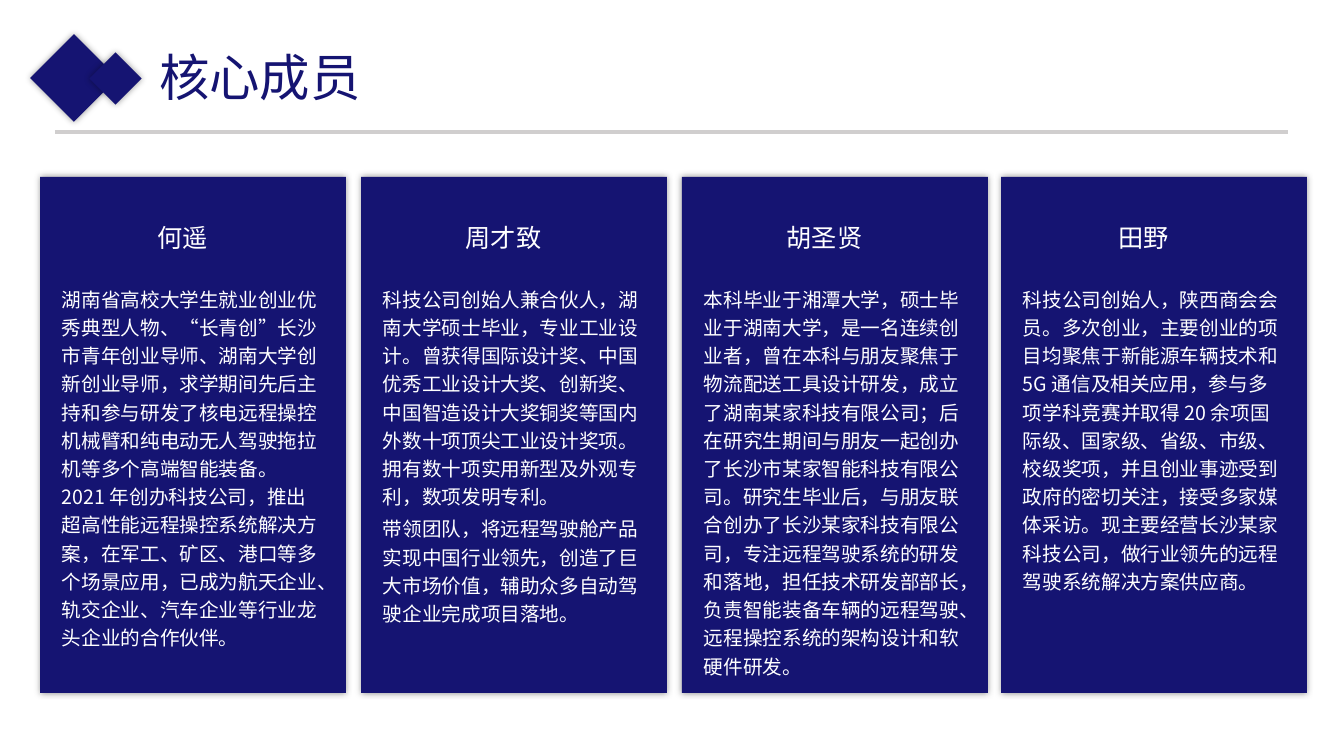
from lxml import etree
from pptx import Presentation
from pptx.dml.color import RGBColor
from pptx.enum.shapes import MSO_CONNECTOR, MSO_SHAPE
from pptx.enum.text import MSO_ANCHOR, MSO_AUTO_SIZE, PP_ALIGN
from pptx.oxml.ns import qn
from pptx.util import Emu, Pt

RECT = MSO_SHAPE.RECTANGLE
STRAIGHT = MSO_CONNECTOR.STRAIGHT
TOP = MSO_ANCHOR.TOP
NO_FIT = MSO_AUTO_SIZE.NONE
LEFT = PP_ALIGN.LEFT
CENTER = PP_ALIGN.CENTER

EMU_PER_PX = 914400 / 100.8
NAVY = "151472"
WHITE = "FFFFFF"
GREY = "D0CECE"
TITLE_FONT = "Noto Sans CJK JP"
BODY_FONT = "Noto Sans CJK SC"

CARD_TOP, CARD_W, CARD_H = 177, 306, 516
MEMBERS = [
    (40, "何遥", [
        "湖南省高校大学生就业创业优秀典型人物、“长青创”长沙市青年创业导师、湖南大学创新创业导师，"
        "求学期间先后主持和参与研发了核电远程操控机械臂和纯电动无人驾驶拖拉机等多个高端智能装备。"
        "2021 年创办科技公司，推出超高性能远程操控系统解决方案，在军工、矿区、港口等多个场景应用，"
        "已成为航天企业、轨交企业、汽车企业等行业龙头企业的合作伙伴。",
    ]),
    (361, "周才致", [
        "科技公司创始人兼合伙人，湖南大学硕士毕业，专业工业设计。曾获得国际设计奖、"
        "中国优秀工业设计大奖、创新奖、中国智造设计大奖铜奖等国内外数十项顶尖工业设计奖项。"
        "拥有数十项实用新型及外观专利，数项发明专利。",
        "带领团队，将远程驾驶舱产品实现中国行业领先，创造了巨大市场价值，"
        "辅助众多自动驾驶企业完成项目落地。",
    ]),
    (682, "胡圣贤", [
        "本科毕业于湘潭大学，硕士毕业于湖南大学，是一名连续创业者，曾在本科与朋友聚焦于物流配送工具设计研发，"
        "成立了湖南某家科技有限公司；后在研究生期间与朋友一起创办了长沙市某家智能科技有限公司。"
        "研究生毕业后，与朋友联合创办了长沙某家科技有限公司，专注远程驾驶系统的研发和落地，"
        "担任技术研发部部长，负责智能装备车辆的远程驾驶、远程操控系统的架构设计和软硬件研发。",
    ]),
    (1001, "田野", [
        "科技公司创始人，陕西商会会员。多次创业，主要创业的项目均聚焦于新能源车辆技术和 5G 通信及相关应用，"
        "参与多项学科竞赛并取得 20 余项国际级、国家级、省级、市级、校级奖项，"
        "并且创业事迹受到政府的密切关注，接受多家媒体采访。"
        "现主要经营长沙某家科技公司，做行业领先的远程驾驶系统解决方案供应商。",
    ]),
]


def px(n):
    return Emu(round(n * EMU_PER_PX))


def rgb(color):
    return RGBColor.from_string(color)


def format_runs(p, size, font, color):
    for r in p.runs:
        r.font.size = Pt(size)
        r.font.name = font
        r.font.color.rgb = rgb(color)
        ea = etree.SubElement(r.font._element, qn("a:ea"))
        ea.set("typeface", font)


def add_glow(sp):
    sp.shadow.inherit = False
    effects = sp._element.spPr.find(qn("a:effectLst"))
    shadow = etree.SubElement(effects, qn("a:outerShdw"), blurRad=str(Pt(5)), dist="0", dir="0")
    color = etree.SubElement(shadow, qn("a:srgbClr"), val="000000")
    etree.SubElement(color, qn("a:alpha"), val="40000")


def add_block(shapes, x, y, w, h, rotation=0):
    sp = shapes.add_shape(RECT, px(x), px(y), px(w), px(h))
    sp.rotation = rotation
    sp.fill.solid()
    sp.fill.fore_color.rgb = rgb(NAVY)
    sp.line.fill.background()
    add_glow(sp)


def add_rule(slide, x1, x2, y):
    line = slide.shapes.add_connector(STRAIGHT, px(x1), px(y), px(x2), px(y))
    line.line.color.rgb = rgb(GREY)
    line.line.width = Pt(2.25)
    etree.SubElement(line._element.spPr, qn("a:effectLst"))


def set_title(slide, text):
    title = slide.shapes.title
    title.left, title.top, title.width, title.height = px(149), px(41), px(626), px(72)
    tf = title.text_frame
    tf.text = text
    tf.auto_size = NO_FIT
    tf.vertical_anchor = TOP
    p = tf.paragraphs[0]
    p.alignment = LEFT
    format_runs(p, 36, TITLE_FONT, NAVY)


def add_name(shapes, x, y, name):
    tf = shapes.add_textbox(px(x), px(y), px(97), px(38)).text_frame
    tf.margin_left = tf.margin_top = tf.margin_right = tf.margin_bottom = 0
    tf.word_wrap = False
    tf.text = name
    p = tf.paragraphs[0]
    p.alignment = CENTER
    format_runs(p, 18, BODY_FONT, WHITE)


def add_profile(shapes, x, y, paragraphs):
    tf = shapes.add_textbox(px(x), px(y), px(278), px(385)).text_frame
    tf.word_wrap = True
    tf.text = "\n".join(paragraphs)
    for i, p in enumerate(tf.paragraphs):
        p.line_spacing = 1.2
        p.space_before = Pt(2.8 if i else 0)
        format_runs(p, 14, BODY_FONT, WHITE)


def add_member(slide, x, name, paragraphs):
    card = slide.shapes.add_group_shape().shapes
    add_block(card, x, CARD_TOP, CARD_W, CARD_H)
    add_name(card, x + 94, CARD_TOP + 45, name)
    add_profile(slide.shapes, x + 12, CARD_TOP + 101, paragraphs)


def main():
    prs = Presentation()
    prs.slide_width, prs.slide_height = px(1344), px(756)
    slide = prs.slides.add_slide(prs.slide_layouts[5])
    add_rule(slide, 55, 1288, 132)
    add_block(slide.shapes, 43, 47, 62, 62, 315)
    add_block(slide.shapes, 97, 60, 37, 37, 315)
    set_title(slide, "核心成员")
    for x, name, paragraphs in MEMBERS:
        add_member(slide, x, name, paragraphs)
    prs.save("out.pptx")


if __name__ == "__main__":
    main()
